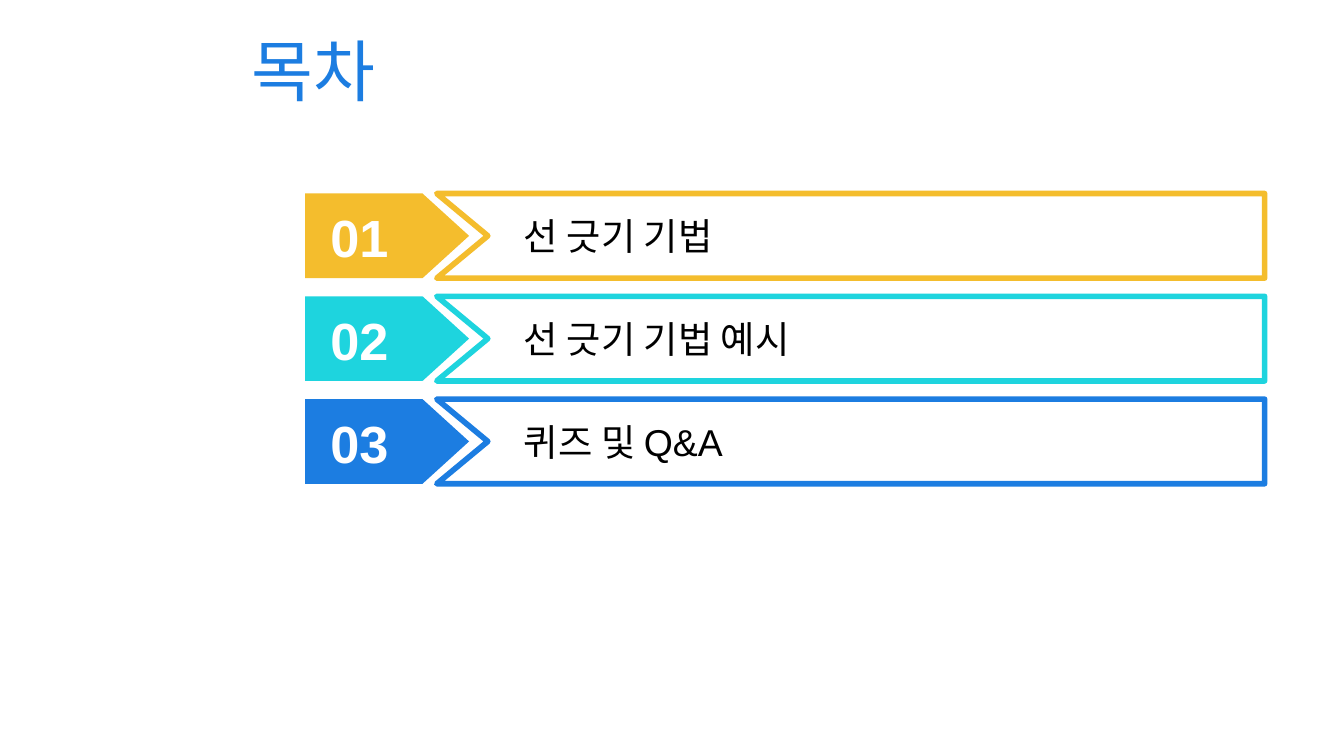
from pptx import Presentation
from pptx.dml.color import RGBColor
from pptx.enum.shapes import MSO_SHAPE
from pptx.enum.text import MSO_ANCHOR, MSO_AUTO_SIZE, PP_ALIGN
from pptx.util import Pt

PENTAGON = MSO_SHAPE.PENTAGON
MIDDLE, TOP = MSO_ANCHOR.MIDDLE, MSO_ANCHOR.TOP
FIT = MSO_AUTO_SIZE.SHAPE_TO_FIT_TEXT
LEFT = PP_ALIGN.LEFT
PX = 4572  # 200 px to the inch


def rgb(value):
    return RGBColor.from_string(value)


def set_text(tf, text, size, color, anchor, bold=False):
    tf.word_wrap = True
    tf.vertical_anchor = anchor
    p = tf.paragraphs[0]
    p.text = text
    p.alignment = LEFT
    p.font.name = "Arial"
    p.font.size = Pt(size)
    p.font.bold = bold
    p.font.color.rgb = rgb(color)


prs = Presentation()
prs.slide_width, prs.slide_height = 2000 * PX, 1125 * PX
s = prs.slides.add_slide(prs.slide_layouts[5])

# Title
title = s.shapes.title
title.left, title.top = 354 * PX, 6 * PX
title.width, title.height = 1646 * PX, 194 * PX
set_text(title.text_frame, "목차", 36, "1C7DE1", MIDDLE)

# Agenda rows
rows = [
    ("선 긋기 기법", "F4BD2D"),
    ("선 긋기 기법 예시", "1ED4DE"),
    ("퀴즈 및 Q&A", "1C7DE1"),
]
first_top, pitch, height = 288, 153, 126
left, notch, right = 650, 726, 1882

for i, (topic, color) in enumerate(rows):
    top = first_top + i * pitch
    bottom = top + height

    # Number arrow
    arrow = s.shapes.add_shape(PENTAGON, 454 * PX, top * PX, 244 * PX, height * PX)
    arrow.adjustments[0] = 0.55
    arrow.shadow.inherit = False
    arrow.fill.solid()
    arrow.fill.fore_color.rgb = rgb(color)
    arrow.line.fill.background()

    # Notched frame
    fb = s.shapes.build_freeform(left, top, scale=PX)
    fb.add_line_segments(
        [(right, top), (right, bottom), (left, bottom), (notch, top + height // 2)]
    )
    frame = fb.convert_to_shape()
    frame.shadow.inherit = False
    frame.fill.solid()
    frame.fill.fore_color.rgb = rgb("FFFFFF")
    frame.line.color.rgb = rgb(color)
    frame.line.width = Pt(3)

    # Number
    tf = s.shapes.add_textbox(472 * PX, (top + 17) * PX, 132 * PX, 94 * PX).text_frame
    tf.margin_top = tf.margin_bottom = 0
    tf.auto_size = FIT
    set_text(tf, f"{i + 1:02}", 28, "FFFFFF", MIDDLE, bold=True)

    # Topic
    tf = s.shapes.add_textbox(760 * PX, (top + 20) * PX, 1060 * PX, 88 * PX).text_frame
    tf.auto_size = FIT
    set_text(tf, topic, 20, "000000", TOP)

prs.save("out.pptx")
